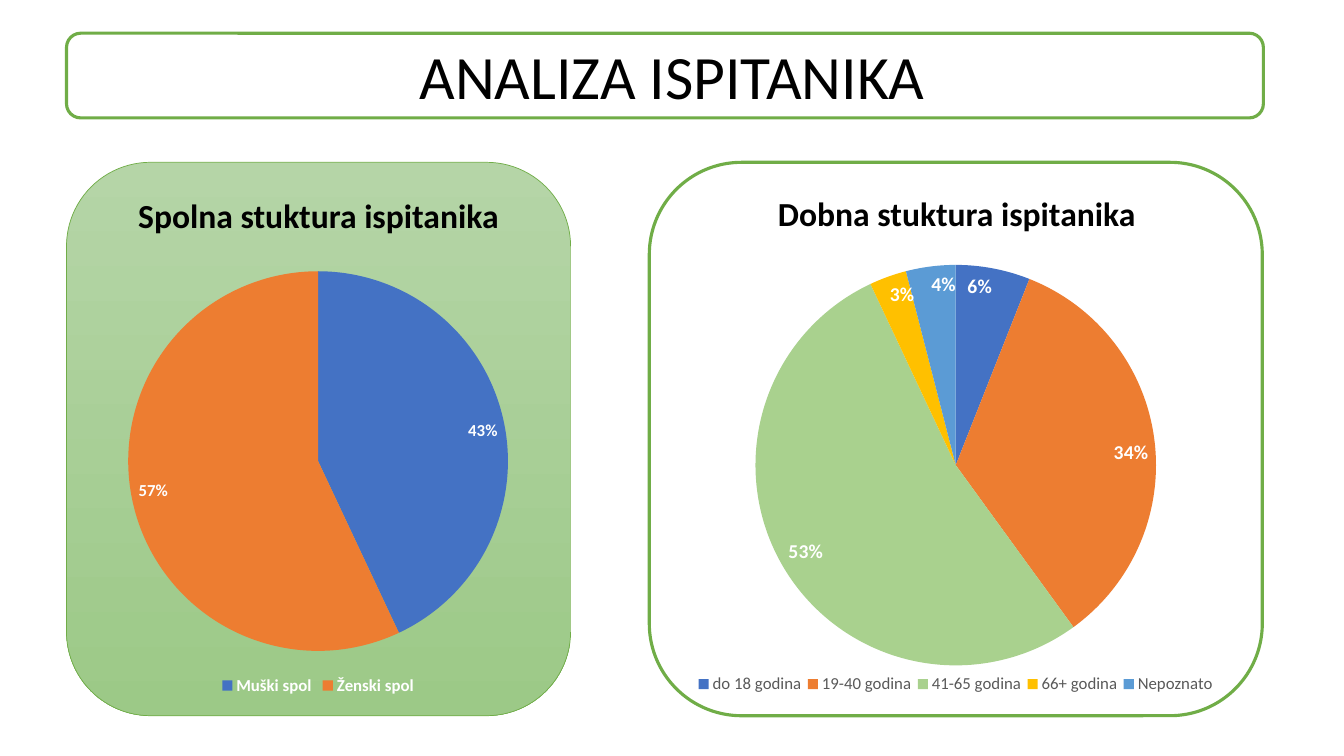
from dataclasses import dataclass

from lxml import etree
from pptx import Presentation
from pptx.chart.data import CategoryChartData
from pptx.dml.color import RGBColor
from pptx.enum.chart import XL_CHART_TYPE, XL_LABEL_POSITION, XL_LEGEND_POSITION
from pptx.enum.shapes import MSO_SHAPE
from pptx.enum.text import MSO_ANCHOR, PP_ALIGN
from pptx.oxml.ns import qn
from pptx.util import Inches, Pt

ROUNDED = MSO_SHAPE.ROUNDED_RECTANGLE
PIE = XL_CHART_TYPE.PIE
INSIDE_END = XL_LABEL_POSITION.INSIDE_END
BOTTOM_LEGEND = XL_LEGEND_POSITION.BOTTOM
MIDDLE, BOTTOM = MSO_ANCHOR.MIDDLE, MSO_ANCHOR.BOTTOM
CENTER = PP_ALIGN.CENTER


@dataclass(frozen=True)
class Theme:
    font: str = "Calibri"
    black: str = "000000"
    white: str = "FFFFFF"
    gray: str = "595959"
    green: str = "70AD47"
    panel_gradient: tuple = ("B5D5A7", "9CC987")
    blue: str = "4472C4"
    orange: str = "ED7D31"
    light_green: str = "A9D18E"
    yellow: str = "FFC000"
    light_blue: str = "5B9BD5"
    title_size: int = 44
    heading_size: int = 24
    large_label_size: int = 14
    label_size: int = 12
    legend_size: int = 12
    chart_size: int = 10


class SlideBuilder:
    """Places elements at (left, top, width, height) in percent of the slide."""

    def __init__(self, prs, theme):
        self.prs, self.theme = prs, theme
        self.s = prs.slides.add_slide(prs.slide_layouts[6])

    def box(self, left, top, width, height):
        w, h = self.prs.slide_width, self.prs.slide_height
        return [round(share * size / 100)
                for share, size in zip((left, top, width, height), (w, h, w, h))]

    def style_font(self, font, size, color, bold=False):
        font.name, font.size, font.bold = self.theme.font, Pt(size), bold
        font.color.rgb = RGBColor.from_string(color)

    def panel(self, at, line_width=2.25, gradient=None):
        sp = self.s.shapes.add_shape(ROUNDED, *self.box(*at))
        sp.shadow.inherit = False
        if gradient:
            sp.fill.gradient()
            sp.fill.gradient_angle = 270
            for stop, color, position in zip(sp.fill.gradient_stops, gradient, (0, 1)):
                stop.color.rgb = RGBColor.from_string(color)
                stop.position = position
        else:
            sp.fill.solid()
            sp.fill.fore_color.rgb = RGBColor.from_string(self.theme.white)
        sp.line.color.rgb = RGBColor.from_string(self.theme.green)
        sp.line.width = Pt(line_width)

    def text(self, at, text, size, bold=False, anchor=BOTTOM):
        tf = self.s.shapes.add_textbox(*self.box(*at)).text_frame
        tf.word_wrap, tf.vertical_anchor = True, anchor
        p = tf.paragraphs[0]
        p.text, p.alignment, p.line_spacing = text, CENTER, 0.9
        self.style_font(p.font, size, self.theme.black, bold)

    def pie(self, at, slices, plot, label_size, legend_color, legend_bold=False,
            legend_at=None):
        names, values, colors = zip(*slices)
        data = CategoryChartData()
        data.categories = names
        data.add_series("Series 1", values)
        chart = self.s.shapes.add_chart(PIE, *self.box(*at), data).chart
        self.style_font(chart.font, self.theme.chart_size, self.theme.black)
        chart.has_title = False

        # Legend
        chart.has_legend = True
        chart.legend.position = BOTTOM_LEGEND
        chart.legend.include_in_layout = False
        self.style_font(chart.legend.font, self.theme.legend_size, legend_color, legend_bold)

        # Slices and percentages
        pie = chart.plots[0]
        pie.vary_by_categories = True
        for i, color in enumerate(colors):
            fill = pie.series[0].points[i].format.fill
            fill.solid()
            fill.fore_color.rgb = RGBColor.from_string(color)
        labels = pie.series[0].data_labels
        labels.show_percentage, labels.show_value = True, False
        labels.number_format, labels.number_format_is_linked = "0%", False
        labels.position = INSIDE_END
        self.style_font(labels.font, label_size, self.theme.white, True)

        # Fixed places inside the chart frame
        self.place(chart, "c:plotArea", 0, plot, [("layoutTarget", "inner")])
        if legend_at:
            self.place(chart, "c:legend", 1, legend_at)

    def place(self, chart, part, index, at, settings=()):
        """Fix a chart part at x, y, width, height in shares of the chart frame."""
        parent = chart.element.find(".//" + qn(part))
        layout = parent.find(qn("c:layout"))
        if layout is None:
            layout = etree.Element(qn("c:layout"))
            parent.insert(index, layout)
        manual = etree.SubElement(layout, qn("c:manualLayout"))
        for tag, value in [*settings, ("xMode", "edge"), ("yMode", "edge"), *zip("xywh", at)]:
            etree.SubElement(manual, qn("c:" + tag)).set("val", str(value))


def main():
    prs = Presentation()
    prs.slide_width, prs.slide_height = Inches(13.33), Inches(7.5)
    t = Theme()
    b = SlideBuilder(prs, t)

    # Panels
    b.panel((4.95, 4.4, 89.05, 11.2))
    b.panel((48.31, 21.47, 45.61, 73.2))
    b.panel((4.95, 21.47, 37.51, 73.2), line_width=0.5, gradient=t.panel_gradient)

    # Slide title
    b.text((6.9, 5.33, 86.27, 10.4), "ANALIZA ISPITANIKA", t.title_size, anchor=MIDDLE)

    # Gender structure
    b.text((4.95, 24.53, 37.51, 7.33), "Spolna stuktura ispitanika", t.heading_size, bold=True)
    b.pie((3.98, 34.13, 39.38, 58.4),
          [("Muški spol", 43, t.blue), ("Ženski spol", 57, t.orange)],
          plot=(0.14, 0.03, 0.72, 0.86), label_size=t.label_size,
          legend_color=t.white, legend_bold=True)

    # Age structure
    b.text((49.21, 24.27, 43.96, 7.33), "Dobna stuktura ispitanika", t.heading_size, bold=True)
    b.pie((48.31, 33.2, 45.61, 61.6),
          [("do 18 godina", 6, t.blue), ("19-40 godina", 34, t.orange),
           ("41-65 godina", 53, t.light_green), ("66+ godina", 3, t.yellow),
           ("Nepoznato", 4, t.light_blue)],
          plot=(0.17, 0.03, 0.66, 0.86), label_size=t.large_label_size,
          legend_color=t.gray, legend_at=(0.07, 0.9, 0.86, 0.06))

    prs.save("out.pptx")


if __name__ == "__main__":
    main()
